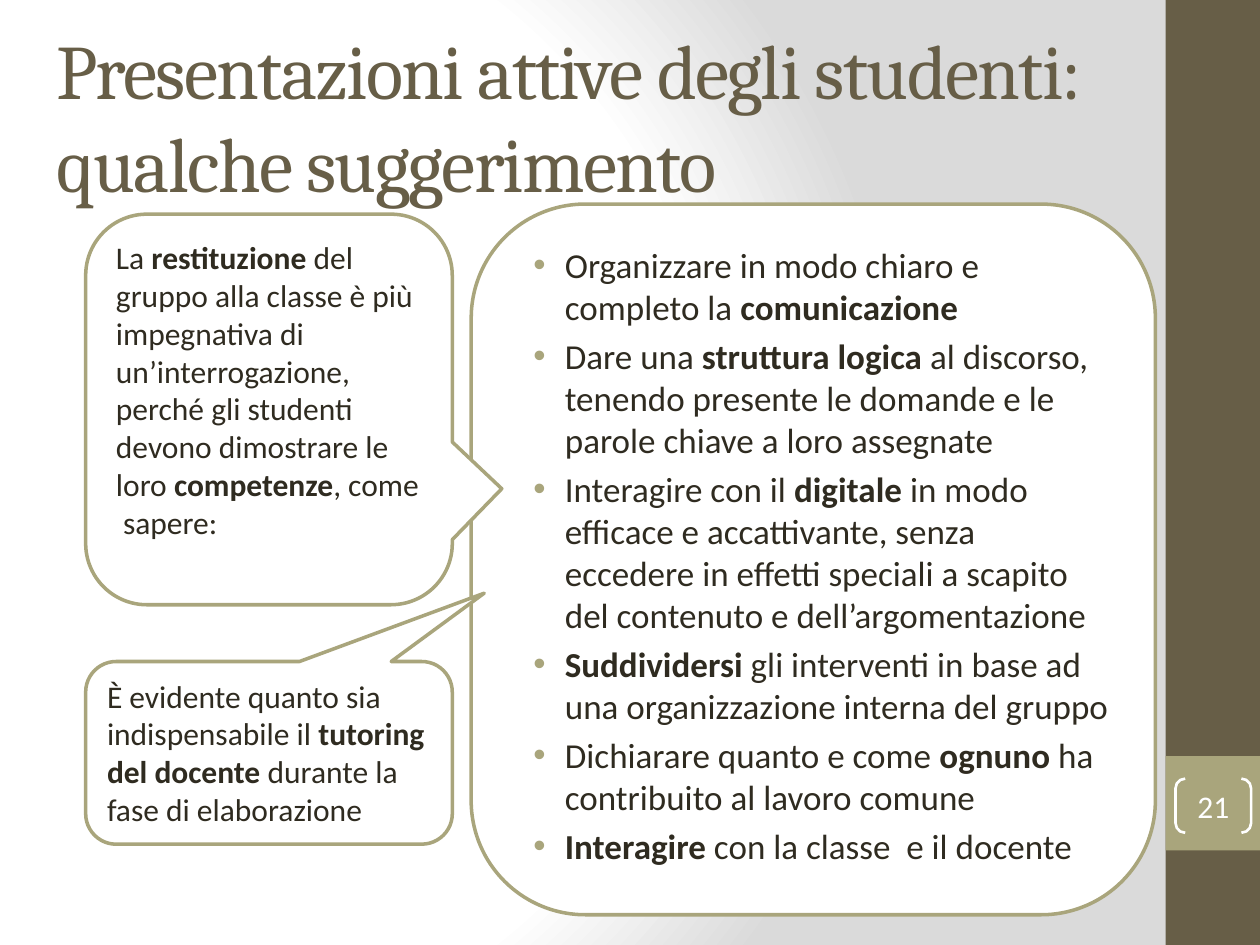
from lxml import etree
from pptx import Presentation
from pptx.dml.color import RGBColor
from pptx.enum.shapes import MSO_SHAPE
from pptx.enum.text import MSO_ANCHOR, PP_ALIGN
from pptx.oxml.ns import qn
from pptx.util import Inches, Pt

RECT = MSO_SHAPE.RECTANGLE
ROUNDED = MSO_SHAPE.ROUNDED_RECTANGLE
CALLOUT = MSO_SHAPE.ROUNDED_RECTANGULAR_CALLOUT
BRACKETS = MSO_SHAPE.DOUBLE_BRACKET
TOP, MIDDLE = MSO_ANCHOR.TOP, MSO_ANCHOR.MIDDLE
LEFT, CENTER = PP_ALIGN.LEFT, PP_ALIGN.CENTER

COLORS = {
    "white": "FFFFFF",
    "grey": "DADADA",
    "brown": "675E47",
    "olive": "A9A57C",
    "ink": "2F2B20",
}

TITLE = "Presentazioni attive degli studenti: qualche suggerimento"
SUGGESTIONS = [
    "Organizzare in modo chiaro e completo la **comunicazione**",
    "Dare una **struttura logica **al discorso, tenendo presente le domande "
    "e le parole chiave a loro assegnate",
    "Interagire con il **digitale** in modo efficace e accattivante, senza "
    "eccedere in effetti speciali a scapito del contenuto e dell’argomentazione",
    "**Suddividersi** gli interventi in base ad una organizzazione interna del gruppo",
    "Dichiarare quanto e come **ognuno** ha contribuito al lavoro comune",
    "**Interagire** con la classe  e il docente",
]
# Each callout: box, pointer and corner adjustments, text
CALLOUTS = [
    ((0.68, 1.7, 2.91, 3.1), (0.635, 0.203, 0.167),
     "La **restituzione** del gruppo alla classe è più impegnativa di "
     "un’interrogazione, perché gli studenti devono dimostrare le loro "
     "**competenze**, come  sapere:"),
    ((0.68, 5.25, 2.91, 1.45), (0.587, -0.874, 0.167),
     "È evidente quanto sia indispensabile il **tutoring del docente **"
     "durante la fase di elaborazione"),
]


def rgb(name):
    return RGBColor.from_string(COLORS[name])


def add_child(parent, tag, **attributes):
    return etree.SubElement(parent, qn(tag), attributes)


def add_box(page, kind, box, fill=None, line=None, width=2, adjust=()):
    shape = page.shapes.add_shape(kind, *map(Inches, box))
    shape.shadow.inherit = False
    if fill:
        shape.fill.solid()
        shape.fill.fore_color.rgb = rgb(fill)
    else:
        shape.fill.background()
    if line:
        shape.line.color.rgb = rgb(line)
        shape.line.width = Pt(width)
    else:
        shape.line.fill.background()
    for index, value in enumerate(adjust):
        shape.adjustments[index] = value
    return shape


def add_bullet(para):
    properties = para._p.get_or_add_pPr()
    properties.set("marL", str(Inches(0.38)))
    properties.set("indent", str(Inches(-0.25)))
    color = add_child(properties, "a:buClr")
    add_child(color, "a:srgbClr", val=COLORS["olive"])
    add_child(properties, "a:buFont", typeface="Arial")
    add_child(properties, "a:buChar", char="•")


def write(shape, paragraphs, size=18, font="Calibri", color="ink", align=LEFT,
          anchor=TOP, bullets=False, before=0, tracking=None, inset=None):
    """Fill a shape with paragraphs; text between ** marks is bold."""
    frame = shape.text_frame
    frame.word_wrap = True
    frame.vertical_anchor = anchor
    if inset is not None:
        frame.margin_left = frame.margin_right = Inches(inset)
        frame.margin_top = frame.margin_bottom = Inches(inset)
    for number, text in enumerate(paragraphs):
        para = frame.add_paragraph() if number else frame.paragraphs[0]
        para.alignment = align
        para.space_before = Pt(before)
        if bullets:
            add_bullet(para)
        for index, part in enumerate(text.split("**")):
            if not part:
                continue
            span = para.add_run()
            span.text = part
            span.font.name = font
            span.font.size = Pt(size)
            span.font.bold = index % 2 == 1
            span.font.color.rgb = rgb(color)
            if tracking is not None:
                span.font._element.set("spc", str(tracking * 100))


def paint_background(page):
    fill = page.background.fill
    fill.gradient()
    gradient = page.background._cSld.find(".//" + qn("a:gradFill"))
    for child in list(gradient):
        gradient.remove(child)
    stops = add_child(gradient, "a:gsLst")
    for percent, color in ((0, "white"), (75, "white"), (100, "grey")):
        stop = add_child(stops, "a:gs", pos=str(percent * 1000))
        add_child(stop, "a:srgbClr", val=COLORS[color])
    path = add_child(gradient, "a:path", path="circle")
    add_child(path, "a:fillToRect", l="20000", t="50000", r="100000", b="50000")


def add_sidebar(page, box, number):
    left, top, width, height = box
    add_box(page, RECT, box, fill="brown")
    add_box(page, RECT, (left, top + height - 1.5, width, 0.75), fill="olive")
    brackets = add_box(page, BRACKETS, (left + 0.08, top + height - 1.32, 0.6, 0.43),
                       line="white", width=1.5, adjust=[0.179])
    write(brackets, [number], color="white", align=CENTER, anchor=MIDDLE, inset=0)


def add_title(page, box):
    title = page.shapes.add_textbox(*map(Inches, box))
    write(title, [TITLE], size=44, font="Cambria", color="brown",
          anchor=MIDDLE, tracking=-1)


def add_suggestions(page, box):
    panel = add_box(page, ROUNDED, box, fill="white", line="olive")
    write(panel, SUGGESTIONS, size=20, bullets=True, before=4)


def add_callout(page, box, adjust, text):
    callout = add_box(page, CALLOUT, box, fill="white", line="olive", adjust=adjust)
    write(callout, [text])


def main():
    deck = Presentation()
    deck.slide_width, deck.slide_height = Inches(10), Inches(7.5)
    page = deck.slides.add_slide(deck.slide_layouts[6])
    paint_background(page)
    add_sidebar(page, (9.25, 0, 0.75, 7.5), "21")
    add_title(page, (0.35, 0.29, 8.83, 1.25))
    add_suggestions(page, (3.74, 1.62, 5.43, 5.64))
    for box, adjust, text in CALLOUTS:
        add_callout(page, box, adjust, text)
    deck.save("out.pptx")


if __name__ == "__main__":
    main()
